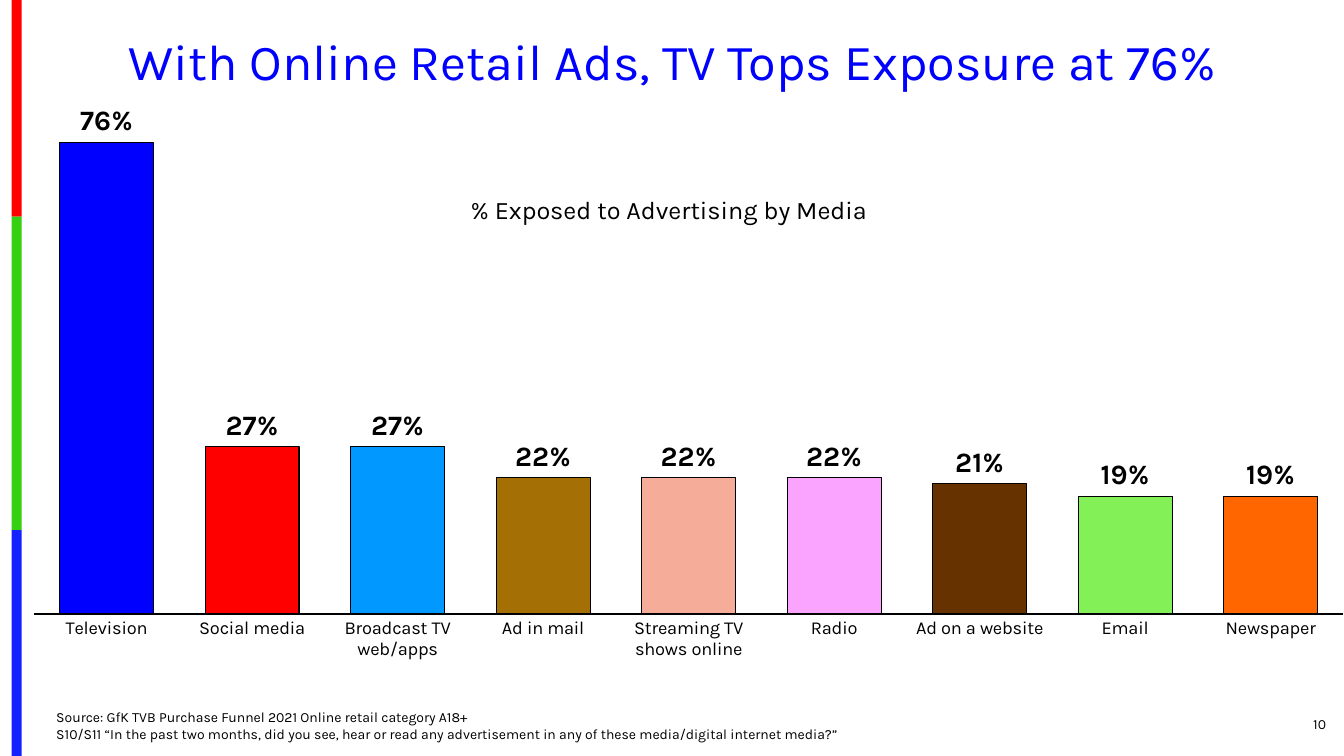
import pptx
import pptx.util
import pptx.chart.data
import pptx.dml.color
import pptx.enum.chart
import pptx.enum.shapes
import pptx.enum.text
import lxml.etree

RGB = pptx.dml.color.RGBColor
Pt = pptx.util.Pt
ALIGN = pptx.enum.text.PP_ALIGN
ANCHOR = pptx.enum.text.MSO_ANCHOR

BLACK = RGB(0, 0, 0)
BLUE = RGB(0, 0, 0xFF)
FONT = "Karla"
WIDE, HIGH = pptx.util.Inches(13.33), pptx.util.Inches(7.5)
COLS, ROWS = 1333, 750  # grid of the slide

# Stripe colours with their heights in rows
BANDS = [
    (RGB(0xFE, 0, 0), 215),
    (RGB(0x36, 0xCF, 0x12), 311),
    (RGB(0x13, 0x22, 0xFE), 224),
]

# Medium, share exposed, bar colour
MEDIA = [
    ("Television", 0.76, BLUE),
    ("Social media", 0.27, RGB(0xFF, 0, 0)),
    ("Broadcast TV web/apps", 0.27, RGB(0x01, 0x99, 0xFF)),
    ("Ad in mail", 0.22, RGB(0xA4, 0x6F, 0x05)),
    ("Streaming TV shows online", 0.22, RGB(0xF5, 0xAD, 0x99)),
    ("Radio", 0.22, RGB(0xFA, 0xA4, 0xFF)),
    ("Ad on a website", 0.21, RGB(0x66, 0x33, 0)),
    ("Email", 0.19, RGB(0x84, 0xF0, 0x58)),
    ("Newspaper", 0.19, RGB(0xFF, 0x66, 0)),
]


def place(box):
    """Turn columns and rows into lengths."""
    x, y, w, h = box
    return (int(WIDE * x / COLS), int(HIGH * y / ROWS),
            int(WIDE * w / COLS), int(HIGH * h / ROWS))


def style(font, size, color=BLACK, bold=False):
    font.name, font.size, font.bold = FONT, Pt(size), bold
    font.color.rgb = color


def stripe(slide, box):
    x, y, w, h = box
    total = sum(rows for _, rows in BANDS)
    for color, rows in BANDS:
        part = h * rows / total
        band = slide.shapes.add_shape(
            pptx.enum.shapes.MSO_SHAPE.RECTANGLE, *place((x, y, w, part)))
        band.shadow.inherit = False
        band.fill.solid()
        band.fill.fore_color.rgb = color
        band.line.fill.background()
        y += part


def words(slide, box, lines, size, color=BLACK, align=ALIGN.LEFT,
          anchor=ANCHOR.MIDDLE, space=1.0):
    frame = slide.shapes.add_textbox(*place(box)).text_frame
    frame.word_wrap = True
    frame.vertical_anchor = anchor
    para = frame.paragraphs[0]
    para.alignment, para.line_spacing = align, space
    for i, line in enumerate(lines):
        if i:
            para.add_line_break()
        run = para.add_run()
        run.text = line
        style(run.font, size, color)


def layout(elem, inner=False, **shares):
    """Fix a chart part at shares of the chart's box."""
    ns = pptx.oxml.ns.qn
    for old in elem.findall(ns("c:layout")):
        elem.remove(old)
    node = lxml.etree.Element(ns("c:layout"))
    man = lxml.etree.SubElement(node, ns("c:manualLayout"))
    marks = [("layoutTarget", "inner")] if inner else []
    marks += [("xMode", "edge"), ("yMode", "edge")]
    marks += [(key, str(val)) for key, val in shares.items()]
    for key, val in marks:
        lxml.etree.SubElement(man, ns("c:" + key)).set("val", val)
    text = elem.find(ns("c:tx"))
    if text is None:
        elem.insert(0, node)
    else:
        text.addnext(node)


def bars(slide, box):
    kinds = pptx.enum.chart
    data = pptx.chart.data.CategoryChartData(number_format="0%")
    data.categories = [name for name, _, _ in MEDIA]
    data.add_series("Series 1", [share for _, share, _ in MEDIA])
    chart = slide.shapes.add_chart(
        kinds.XL_CHART_TYPE.COLUMN_CLUSTERED, *place(box), data).chart
    style(chart.font, 10)
    chart.has_legend = False

    # Heading inside the chart
    chart.has_title = True
    title = chart.chart_title
    title.include_in_layout = True
    run = title.text_frame.paragraphs[0].add_run()
    run.text = "% Exposed to Advertising by Media"
    style(run.font, 18)
    layout(title._element, x=0.33, y=0.15)

    # Axes
    axis = chart.category_axis
    axis.major_tick_mark = kinds.XL_TICK_MARK.NONE
    axis.format.line.color.rgb = BLACK
    axis.format.line.width = Pt(0.75)
    style(axis.tick_labels.font, 13)
    scale = chart.value_axis
    scale.minimum_scale, scale.maximum_scale = 0, 0.8
    scale.has_major_gridlines = False
    scale.visible = False

    # Columns and their labels
    plot = chart.plots[0]
    plot.vary_by_categories = False
    plot.gap_width, plot.overlap = 55, -30
    series = plot.series[0]
    for i, (_, _, color) in enumerate(MEDIA):
        look = series.points[i].format
        look.fill.solid()
        look.fill.fore_color.rgb = color
        look.line.color.rgb = BLACK
        look.line.width = Pt(0.75)
    tags = series.data_labels
    tags.show_value = True
    tags.position = kinds.XL_LABEL_POSITION.OUTSIDE_END
    tags.number_format, tags.number_format_is_linked = "0%", False
    style(tags.font, 20, bold=True)
    layout(chart._chartSpace.chart.plotArea, inner=True,
           x=0, y=0.027, w=1, h=0.86)


def main():
    deck = pptx.Presentation()
    deck.slide_width, deck.slide_height = WIDE, HIGH
    slide = deck.slides.add_slide(deck.slide_layouts[6])
    stripe(slide, (11.5, 0, 10, ROWS))
    words(slide, (46, 31, 1242, 65),
          ["With Online Retail Ads, TV Tops Exposure at 76%"],
          36, BLUE, ALIGN.CENTER, space=0.9)
    bars(slide, (33, 101, 1300, 573))
    words(slide, (1217, 698, 108, 40), ["10"], 10, align=ALIGN.RIGHT)
    words(slide, (46, 701, 1063, 40), [
        "Source: GfK TVB Purchase Funnel 2021 Online retail category A18+",
        "S10/S11 “In the past two months, did you see, hear or read any "
        "advertisement in any of these media/digital internet media?”",
    ], 10, anchor=ANCHOR.BOTTOM)
    deck.save("out.pptx")


if __name__ == "__main__":
    main()
